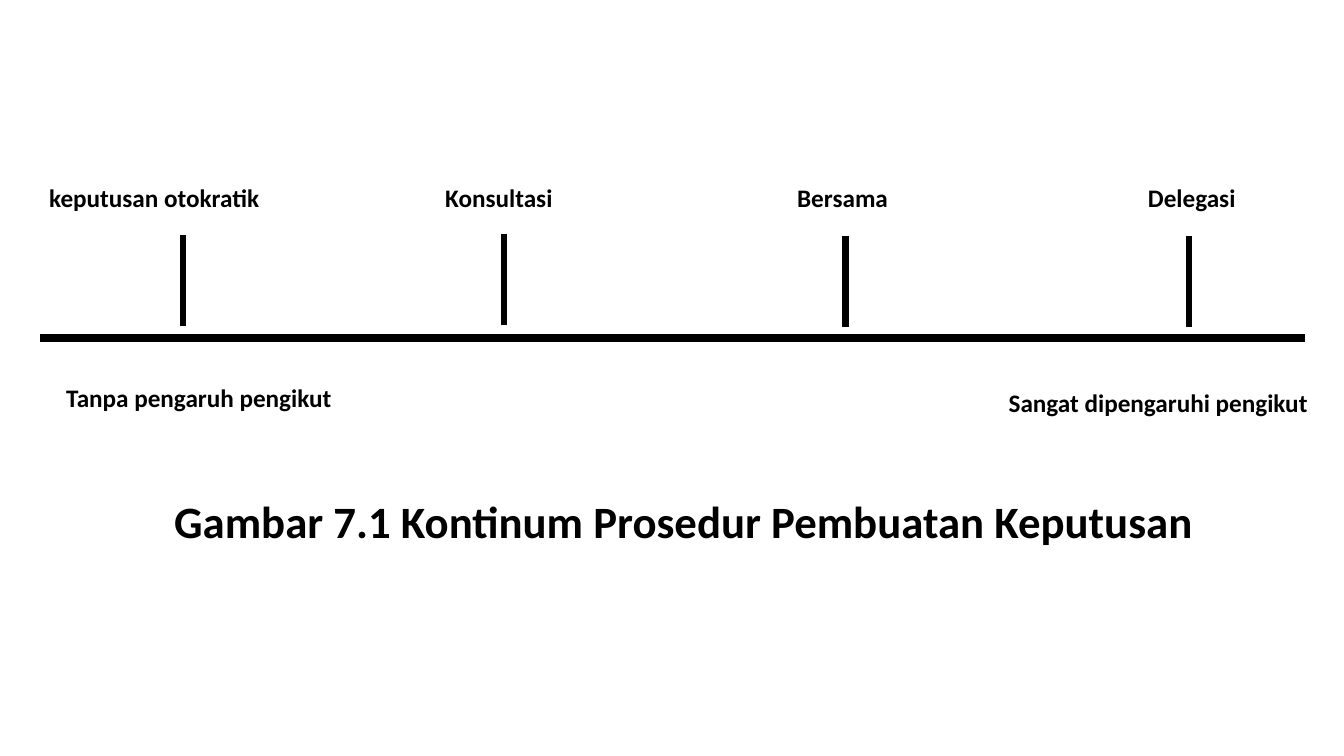
from pptx import Presentation
from pptx.dml.color import RGBColor
from pptx.enum.shapes import MSO_CONNECTOR
from pptx.enum.text import MSO_AUTO_SIZE
from pptx.oxml.ns import qn
from pptx.util import Cm, Pt
from lxml import etree

STRAIGHT = MSO_CONNECTOR.STRAIGHT
GROW = MSO_AUTO_SIZE.SHAPE_TO_FIT_TEXT
COLORS = {"ink": "000000", "paper": "FFFFFF"}
FONT = "Calibri"

# Lengths in cm: label, label left, label width, tick x, tick top
STEPS = [
    ("keputusan otokratik", 0.99, 8.03, 4.62, 5.92),
    ("Konsultasi", 10.97, 3.43, 12.7, 5.89),
    ("Bersama", 19.84, 3.43, 21.31, 5.94),
    ("Delegasi", 28.68, 3.43, 29.97, 5.94),
]
# Text, left, top, width
ENDS = [
    ("Tanpa pengaruh pengikut", 1.42, 9.5, 8.03),
    ("Sangat dipengaruhi pengikut", 25.17, 9.63, 8.59),
]
TITLE = ("Gambar 7.1 Kontinum Prosedur Pembuatan Keputusan", 4.14, 12.32, 26.8)
AXIS = (1.02, 8.51, 32.89, 8.51)
LABEL_TOP = 4.47
TICK = 2.29


def add_line(slide, x1, y1, x2, y2, width):
    line = slide.shapes.add_connector(STRAIGHT, Cm(x1), Cm(y1), Cm(x2), Cm(y2))
    line.line.color.rgb = RGBColor.from_string(COLORS["ink"])
    line.line.width = Pt(width)
    etree.SubElement(line._element.spPr, qn("a:effectLst"))


def add_text(slide, text, left, top, width, height=1.02, size=18):
    box = slide.shapes.add_textbox(Cm(left), Cm(top), Cm(width), Cm(height))
    frame = box.text_frame
    frame.word_wrap = True
    frame.auto_size = GROW
    frame.text = text
    font = frame.paragraphs[0].runs[0].font
    font.name = FONT
    font.size = Pt(size)
    font.bold = True
    font.color.rgb = RGBColor.from_string(COLORS["ink"])


def main():
    deck = Presentation()
    deck.slide_width, deck.slide_height = Cm(33.87), Cm(19.05)
    slide = deck.slides.add_slide(deck.slide_layouts[6])
    fill = slide.background.fill
    fill.solid()
    fill.fore_color.rgb = RGBColor.from_string(COLORS["paper"])

    add_line(slide, *AXIS, 6)
    for label, left, width, x, top in STEPS:
        add_line(slide, x, top, x, top + TICK, 4.5)
        add_text(slide, label, left, LABEL_TOP, width)
    for end in ENDS:
        add_text(slide, *end)
    add_text(slide, *TITLE, height=1.63, size=32)
    deck.save("out.pptx")


if __name__ == "__main__":
    main()
